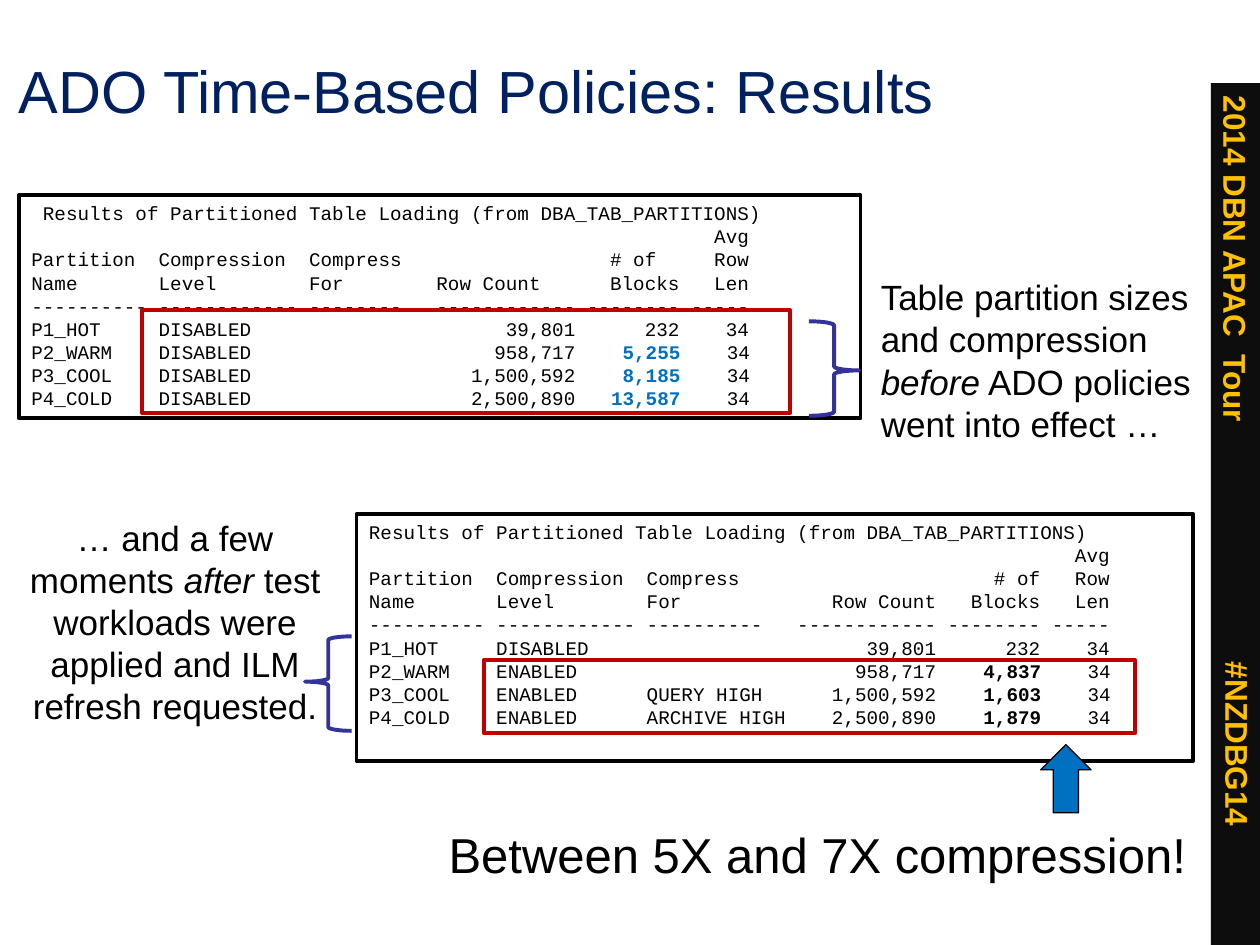
from pptx import Presentation, util as u
from pptx.dml.color import RGBColor
from pptx.enum import shapes, text

SHAPE = shapes.MSO_SHAPE
ALIGN = text.PP_ALIGN
ANCHOR = text.MSO_ANCHOR
NAVY, BLACK, RED, BLUE = "002060", "000000", "C00000", "0070C0"
GOLD, INDIGO, DARK = "FFC000", "333399", "0D0D0D"

HEADING = "Results of Partitioned Table Loading (from DBA_TAB_PARTITIONS)"
BEFORE = [
    ("", "", "", "", "", "Avg"),
    ("Partition", "Compression", "Compress", "", "# of  ", "Row"),
    ("Name", "Level", "For", "Row Count   ", "Blocks", "Len"),
    None,
    ("P1_HOT", "DISABLED", "", "39,801", "232", "34"),
    ("P2_WARM", "DISABLED", "", "958,717", "5,255", "34"),
    ("P3_COOL", "DISABLED", "", "1,500,592", "8,185", "34"),
    ("P4_COLD", "DISABLED", "", "2,500,890", "13,587", "34"),
]
AFTER = [
    ("", "", "", "", "", "Avg"),
    ("Partition", "Compression", "Compress", "", "# of", "Row"),
    ("Name", "Level", "For", "Row Count", "Blocks", "Len"),
    None,
    ("P1_HOT", "DISABLED", "", "39,801", "232", "34"),
    ("P2_WARM", "ENABLED", "", "958,717", "4,837", "34"),
    ("P3_COOL", "ENABLED", "QUERY HIGH", "1,500,592", "1,603", "34"),
    ("P4_COLD", "ENABLED", "ARCHIVE HIGH", "2,500,890", "1,879", "34"),
]


def rgb(code):
    return RGBColor.from_string(code)


def inches(box):
    return [u.Inches(n) for n in box]


def add_run(para, words, size, color=BLACK, name="Arial", bold=False, italic=False):
    run = para.add_run()
    run.text = words
    font = run.font
    font.size, font.name = u.Pt(size), name
    font.bold, font.italic = bold, italic
    font.color.rgb = rgb(color)


def add_shape(slide, kind, box, fill=None, line=None, width=2.25, turn=0):
    shape = slide.shapes.add_shape(kind, *inches(box))
    shape.shadow.inherit = False
    shape.rotation = turn
    if fill:
        shape.fill.solid()
        shape.fill.fore_color.rgb = rgb(fill)
    else:
        shape.fill.background()
    if line:
        shape.line.color.rgb = rgb(line)
        shape.line.width = u.Pt(width)
    else:
        shape.line.fill.background()
    return shape


def set_frame(frame, pad=None, wrap=True, anchor=ANCHOR.TOP):
    frame.word_wrap = wrap
    frame.vertical_anchor = anchor
    if pad is not None:
        side, edge = inches(pad)
        frame.margin_left = frame.margin_right = side
        frame.margin_top = frame.margin_bottom = edge


def add_label(slide, box, words, size, color=BLACK, bold=False, turn=0, **frame):
    label = slide.shapes.add_textbox(*inches(box))
    label.rotation = turn
    set_frame(label.text_frame, **frame)
    add_run(label.text_frame.paragraphs[0], words, size, color, bold=bold)


def add_banner(slide, box):
    """Dark strip on the right with the event name and hashtag."""
    left, top, width, _ = box
    strip = add_shape(slide, SHAPE.RECTANGLE, box, fill=DARK)
    frame = strip.text_frame
    set_frame(frame)
    frame._txBody.bodyPr.set("vert", "vert")
    para = frame.paragraphs[0]
    para.alignment = ALIGN.LEFT
    add_run(para, "2014 DBN APAC  Tour", 18, GOLD, bold=True)
    tag = (left - 0.55, top + 5.06, 1.53, width)
    add_label(slide, tag, "#NZDBG14", 18, GOLD, bold=True, turn=90, wrap=False)


def add_report(slide, box, heading, rows, span, color, mark):
    """Fixed-width listing; span is the width of its third column."""
    panel = add_shape(slide, SHAPE.RECTANGLE, box, line=BLACK)
    frame = panel.text_frame
    set_frame(frame)
    rule = ["-" * n for n in (10, 12, span - 2, 12, 8, 5)]
    lines = [(heading, "", "")]
    for row in rows:
        name, level, kind, count, blocks, size = row or rule
        head = f"{name:<10} {level:<12} {kind:<{span}} {count:>12} "
        tail = f" {size:>5}"
        if name in ("P2_WARM", "P3_COOL", "P4_COLD"):
            lines.append((head + " " * (8 - len(blocks)), blocks, tail))
        else:
            lines.append((f"{head}{blocks:>8}{tail}", "", ""))
    for i, (head, strong, tail) in enumerate(lines):
        para = frame.paragraphs[0] if i == 0 else frame.add_paragraph()
        para.alignment = ALIGN.LEFT
        para.line_spacing = u.Pt(13.2)
        add_run(para, head, 11, name="Courier New")
        if strong:
            add_run(para, strong, 11, color, "Courier New", bold=True)
            add_run(para, tail, 11, name="Courier New")
    # Frame around the rows that matter
    add_shape(slide, SHAPE.RECTANGLE, mark, line=RED)


def add_note(slide, box, parts, align, brace, turn, point):
    """Comment with its middle part in italics, and a brace beside it."""
    note = slide.shapes.add_textbox(*inches(box))
    set_frame(note.text_frame, pad=(0, 0))
    para = note.text_frame.paragraphs[0]
    para.alignment = align
    para.line_spacing = u.Pt(24)
    for i, words in enumerate(parts):
        add_run(para, words, 20, italic=i == 1)
    curve = add_shape(slide, SHAPE.RIGHT_BRACE, brace, line=INDIGO, turn=turn)
    curve.adjustments[0], curve.adjustments[1] = 0.08, point


def main():
    deck = Presentation()
    deck.slide_width, deck.slide_height = inches((10, 7.5))
    slide = deck.slides.add_slide(deck.slide_layouts[6])

    add_banner(slide, (9.61, 0.66, 0.4, 6.84))
    add_label(slide, (0.08, 0.35, 9.05, 0.73), "ADO Time-Based Policies: Results",
              34, NAVY, pad=(0.07, 0.04), anchor=ANCHOR.MIDDLE)

    # Listings before and after the policies
    add_report(slide, (0.15, 1.55, 6.68, 1.77), " " + HEADING, BEFORE, 10, BLUE,
               mark=(1.13, 2.46, 5.14, 0.82))
    add_report(slide, (2.83, 4.08, 6.64, 1.96), HEADING, AFTER, 12, BLACK,
               mark=(3.84, 5.24, 5.17, 0.58))

    # Comments
    add_note(slide, (6.99, 2.19, 2.59, 1.65),
             ("Table partition sizes and compression ", "before",
              " ADO policies went into effect …"),
             ALIGN.LEFT, (6.42, 2.55, 0.4, 0.75), 0, 0.52)
    add_note(slide, (0.13, 4.1, 2.52, 1.72),
             ("… and a few moments ", "after",
              " test workloads were applied and ILM refresh requested."),
             ALIGN.CENTER, (2.42, 5.05, 0.37, 0.75), 180, 0.52)

    # Conclusion
    add_shape(slide, SHAPE.RIGHT_ARROW, (8.19, 5.98, 0.54, 0.4), BLUE, BLACK, 0.75, 270)
    add_label(slide, (3.49, 6.5, 6.19, 0.54), "Between 5X and 7X compression!", 28,
              pad=(0.07, 0.04), wrap=False)
    deck.save("out.pptx")


if __name__ == "__main__":
    main()
